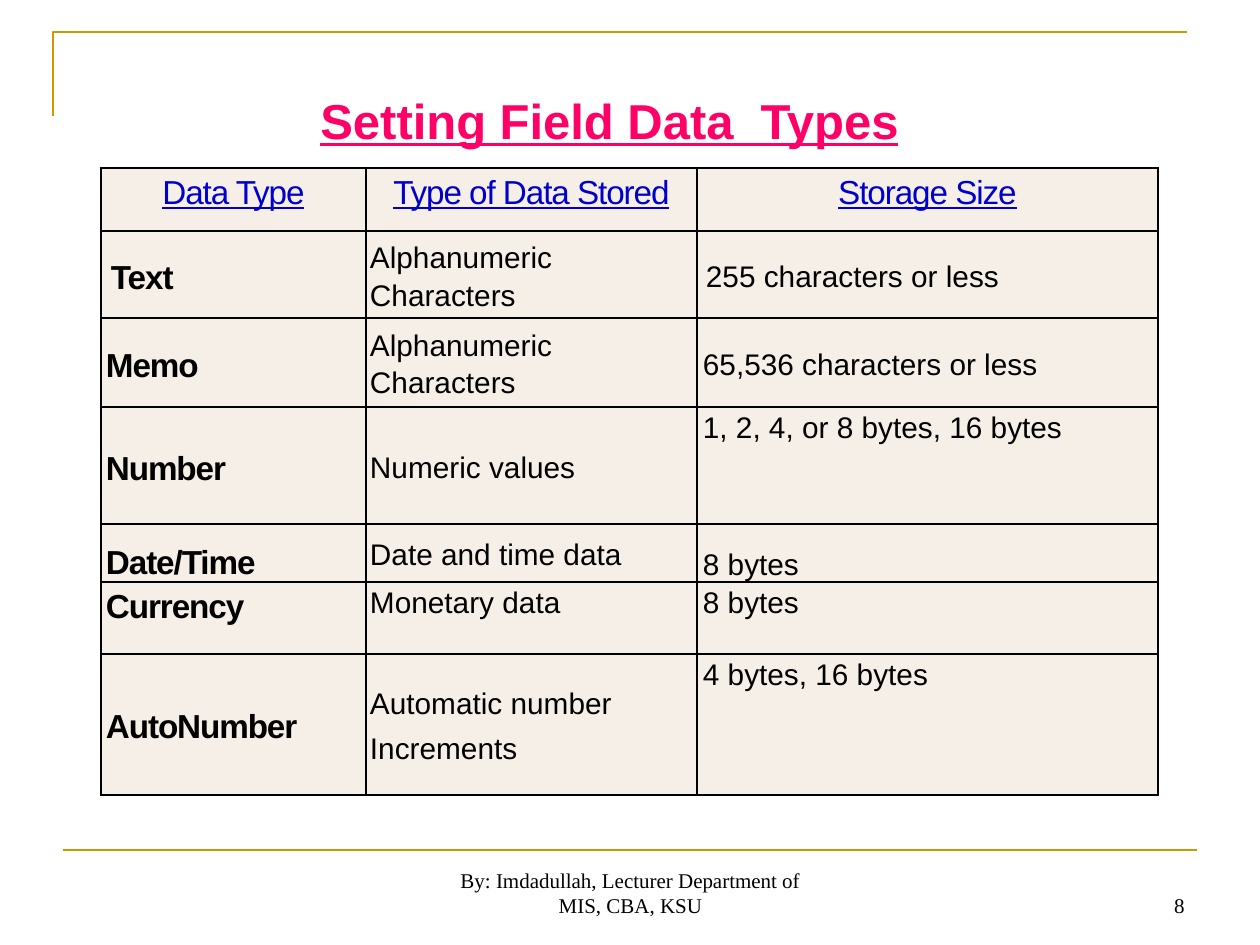
from lxml import etree
from pptx import Presentation, util as u
from pptx.dml.color import RGBColor
from pptx.enum import shapes, text
from pptx.oxml import ns

PX = 914400 / 126
GOLD = RGBColor(0xCC, 0x99, 0x00)
PINK = RGBColor(0xFF, 0x00, 0x66)
BLUE = RGBColor(0x00, 0x00, 0xCC)
CREAM = RGBColor(0xF6, 0xEF, 0xE7)
BLACK = RGBColor(0, 0, 0)
TOP, MIDDLE, BOTTOM = text.MSO_ANCHOR.TOP, text.MSO_ANCHOR.MIDDLE, text.MSO_ANCHOR.BOTTOM
LEFT, CENTER, RIGHT = text.PP_ALIGN.LEFT, text.PP_ALIGN.CENTER, text.PP_ALIGN.RIGHT

COLUMNS = [265, 331, 461]
HEADERS = ["Data Type", "Type of Data Stored", "Storage Size"]
ROWS = [
    (87, ["Text", "Alphanumeric\nCharacters", "255 characters or less"], [MIDDLE, MIDDLE, MIDDLE]),
    (89, ["Memo", "Alphanumeric\nCharacters", "65,536 characters or less"], [MIDDLE, MIDDLE, MIDDLE]),
    (117, ["Number", "Numeric values", "1, 2, 4, or 8 bytes, 16 bytes"], [MIDDLE, MIDDLE, TOP]),
    (58, ["Date/Time", "Date and time data", "8 bytes"], [BOTTOM, MIDDLE, BOTTOM]),
    (72, ["Currency", "Monetary data", "8 bytes"], [TOP, TOP, TOP]),
    (141, ["AutoNumber", "Automatic number\nIncrements", "4 bytes, 16 bytes"], [MIDDLE, MIDDLE, TOP]),
]


def emu(px):
    return u.Emu(round(px * PX))


class Deck:
    """Draws styled elements on the current slide."""

    def __init__(self, width, height):
        self.presentation = Presentation()
        self.presentation.slide_width = emu(width)
        self.presentation.slide_height = emu(height)
        self.slide = self.presentation.slides.add_slide(self.presentation.slide_layouts[6])

    def style(self, paragraph, size, color=BLACK, name="Arial", bold=False, underline=False, spacing=0):
        for run in paragraph.runs:
            font = run.font
            font.size, font.name, font.bold, font.underline = u.Pt(size), name, bold, underline
            font.color.rgb = color
            if spacing:
                font._element.set("spc", str(spacing))

    def outline(self, line):
        line.color.rgb = GOLD
        line.width = u.Pt(1.5)

    def corner(self, start, *points):
        builder = self.slide.shapes.build_freeform(*start, scale=PX)
        builder.add_line_segments(points, close=False)
        shape = builder.convert_to_shape()
        shape.shadow.inherit = False
        shape.fill.background()
        self.outline(shape.line)

    def rule(self, left, right, y):
        connector = self.slide.shapes.add_connector(
            shapes.MSO_CONNECTOR.STRAIGHT, emu(left), emu(y), emu(right), emu(y))
        self.outline(connector.line)
        etree.SubElement(connector._element.spPr, ns.qn("a:effectLst"))

    def label(self, box, words, align, anchor, **style):
        frame = self.slide.shapes.add_textbox(*map(emu, box)).text_frame
        frame.word_wrap = True
        frame.vertical_anchor = anchor
        frame.text = words
        paragraph = frame.paragraphs[0]
        paragraph.alignment = align
        self.style(paragraph, **style)

    def borders(self, cell):
        properties = cell._tc.get_or_add_tcPr()
        for side in "LRTB":
            line = etree.SubElement(properties, ns.qn(f"a:ln{side}"), w=str(u.Pt(1.5)))
            fill = etree.SubElement(line, ns.qn("a:solidFill"))
            etree.SubElement(fill, ns.qn("a:srgbClr"), val=str(BLACK))

    def cell(self, cell, words, anchor, align, indent, leading, **style):
        self.borders(cell)
        cell.fill.solid()
        cell.fill.fore_color.rgb = CREAM
        cell.margin_left = emu(indent)
        cell.margin_right = cell.margin_top = cell.margin_bottom = 0
        cell.vertical_anchor = anchor
        cell.text_frame.text = words
        for paragraph in cell.text_frame.paragraphs:
            paragraph.alignment = align
            paragraph.line_spacing = u.Pt(leading)
            self.style(paragraph, **style)

    def table(self, left, top, columns, heights):
        table = self.slide.shapes.add_table(
            len(heights), len(columns), emu(left), emu(top), emu(sum(columns)), emu(sum(heights))).table
        table.first_row = table.horz_banding = False
        for column, width in zip(table.columns, columns):
            column.width = emu(width)
        for row, height in zip(table.rows, heights):
            row.height = emu(height)
        return table


def main():
    deck = Deck(1260, 945)
    deck.corner((53, 116), (53, 32), (1187, 32))
    deck.rule(63, 1197, 850)
    footer = dict(size=12, name="Times New Roman")
    deck.label((431, 861, 399, 63), "By: Imdadullah, Lecturer Department of MIS, CBA, KSU",
               CENTER, BOTTOM, **footer)
    deck.label((903, 861, 294, 63), "8", RIGHT, BOTTOM, **footer)

    table = deck.table(101, 168, COLUMNS, [63] + [height for height, _, _ in ROWS])
    for column, header in enumerate(HEADERS):
        deck.cell(table.cell(0, column), header, TOP, CENTER, 0, 24.6,
                  size=19, color=BLUE, underline=True, spacing=-60)
    name_style = dict(leading=24.6, size=19, bold=True, spacing=-60)
    body_style = dict(leading=21.6, size=17)
    styles = [name_style, body_style, body_style]
    for row, (_, words, anchors) in enumerate(ROWS, 1):
        indents = [10, 4, 9] if row == 1 else [5, 4, 6]
        for column, style in enumerate(styles):
            deck.cell(table.cell(row, column), words[column], anchors[column], LEFT,
                      indents[column], **style)
    increments = table.cell(len(ROWS), 1).text_frame.paragraphs[1]
    increments.space_before = u.Pt(3.6)

    deck.label((305, 84, 609, 72), "Setting Field Data  Types", CENTER, TOP,
               size=28, color=PINK, bold=True, underline=True)
    deck.presentation.save("out.pptx")


if __name__ == "__main__":
    main()
